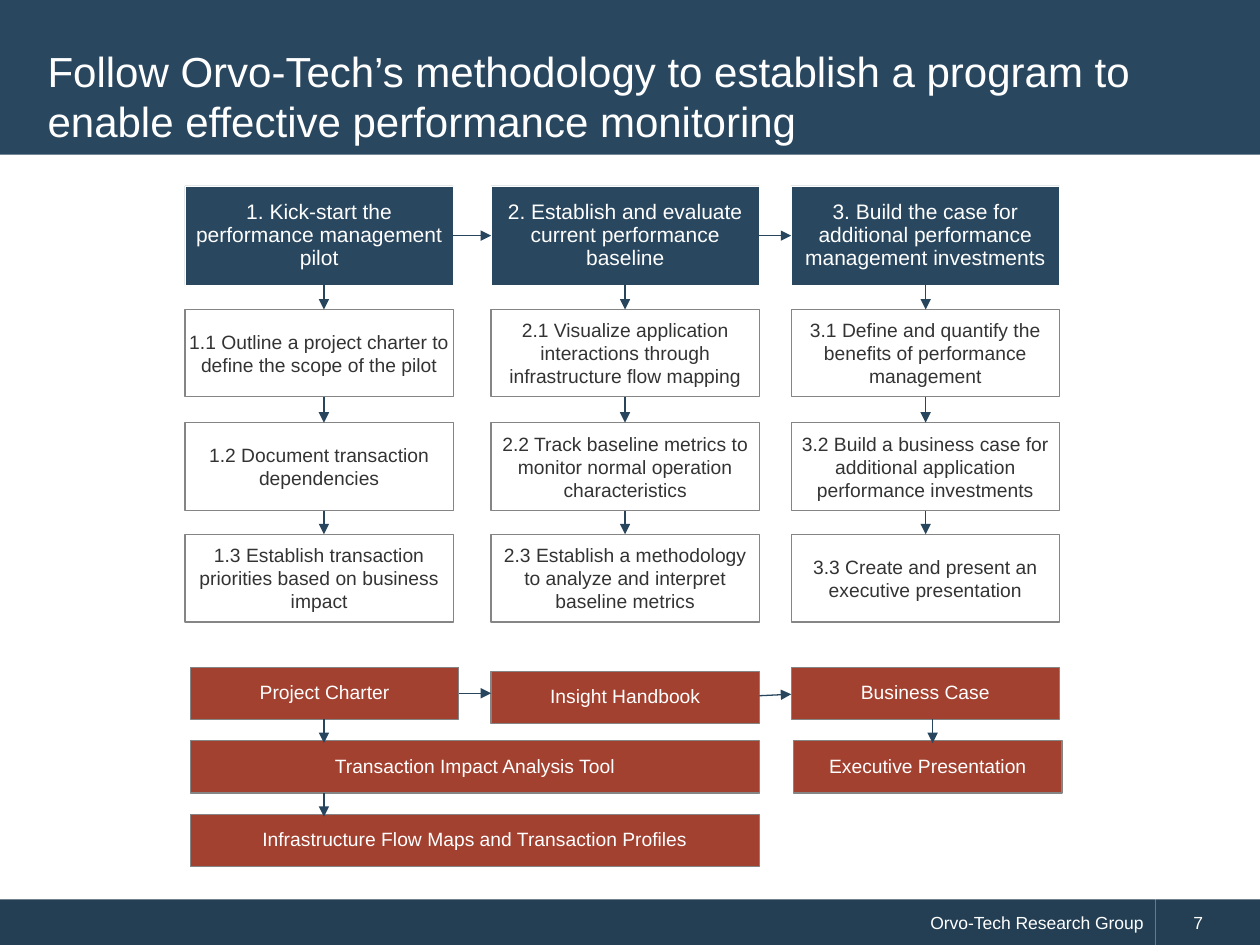
import pptx
import pptx.util
import pptx.dml.color
import pptx.enum.shapes
import pptx.enum.text
import lxml.etree
from dataclasses import dataclass
from pptx.oxml import ns

Cm = pptx.util.Cm
Pt = pptx.util.Pt
ALIGN = pptx.enum.text.PP_ALIGN


@dataclass(frozen=True)
class Theme:
    font: str = "Arial"
    navy: str = "29475F"
    footer: str = "243F54"
    red: str = "A24130"
    white: str = "FFFFFF"
    ink: str = "333333"
    border: str = "858585"
    arrow: str = "27465E"
    title_size: int = 24
    phase_size: int = 12
    step_size: int = 11
    footer_size: int = 10


THEME = Theme()

# Layout in centimetres
COL_X = (3.73, 9.9, 15.95)
ARROW_X = (6.53, 12.6, 18.66)
BOX_W = 5.41
ROWS = ((3.75, 2.0), (6.24, 1.76), (8.52, 1.78), (10.77, 1.77))
OUT_X, OUT_Y, OUT_H, OUT_PITCH = 3.84, 13.45, 1.05, 1.485
WIDE_W = COL_X[1] + BOX_W - OUT_X

PHASES = (
    ("1. Kick-start the performance management pilot",
     "1.1 Outline a project charter to define the scope of the pilot",
     "1.2 Document transaction dependencies",
     "1.3 Establish transaction priorities based on business impact"),
    ("2. Establish and evaluate current performance baseline",
     "2.1 Visualize application interactions through infrastructure flow mapping",
     "2.2 Track baseline metrics to monitor normal operation characteristics",
     "2.3 Establish a methodology to analyze and interpret baseline metrics"),
    ("3. Build the case for additional performance management investments",
     "3.1 Define and quantify the benefits of performance management",
     "3.2 Build a business case for additional application performance investments",
     "3.3 Create and present an executive presentation"),
)

# Text, left, top, width
DELIVERABLES = (
    ("Project Charter", OUT_X, OUT_Y, BOX_W),
    ("Insight Handbook", COL_X[1], OUT_Y + 0.09, BOX_W),
    ("Business Case", COL_X[2], OUT_Y, BOX_W),
    ("Transaction Impact Analysis Tool", OUT_X, OUT_Y + OUT_PITCH, WIDE_W),
    ("Executive Presentation", COL_X[2] + 0.05, OUT_Y + OUT_PITCH, BOX_W),
    ("Infrastructure Flow Maps and Transaction Profiles",
     OUT_X, OUT_Y + 2 * OUT_PITCH, WIDE_W),
)


def rgb(value):
    return pptx.dml.color.RGBColor.from_string(value)


def write(sp, text, size, color, align=ALIGN.CENTER, insets=(0.08, 0.05, 0.08, 0.05),
          spacing=None):
    tf = sp.text_frame
    tf.word_wrap = True
    tf.vertical_anchor = pptx.enum.text.MSO_ANCHOR.MIDDLE
    tf.margin_left, tf.margin_top, tf.margin_right, tf.margin_bottom = map(Cm, insets)
    p = tf.paragraphs[0]
    p.alignment = align
    if spacing:
        p.line_spacing = spacing
    r = p.add_run()
    r.text = text
    r.font.name = THEME.font
    r.font.size = Pt(size)
    r.font.color.rgb = rgb(color)


def add_box(s, x, y, w, h, fill, line=None, line_width=0.75):
    sp = s.shapes.add_shape(pptx.enum.shapes.MSO_SHAPE.RECTANGLE,
                            Cm(x), Cm(y), Cm(w), Cm(h))
    sp.shadow.inherit = False
    sp.fill.solid()
    sp.fill.fore_color.rgb = rgb(fill)
    if line:
        sp.line.color.rgb = rgb(line)
        sp.line.width = Pt(line_width)
    else:
        sp.line.fill.background()
    return sp


def add_arrow(s, x1, y1, x2, y2):
    cx = s.shapes.add_connector(pptx.enum.shapes.MSO_CONNECTOR.STRAIGHT,
                                Cm(x1), Cm(y1), Cm(x2), Cm(y2))
    cx.line.color.rgb = rgb(THEME.arrow)
    cx.line.width = Pt(0.75)
    ln = cx.line._get_or_add_ln()
    lxml.etree.SubElement(ln, ns.qn("a:tailEnd"), type="triangle")
    lxml.etree.SubElement(cx._element.spPr, ns.qn("a:effectLst"))


def add_frame(s):
    # Title band
    add_box(s, 0, 0, 25.4, 3.12, THEME.navy)
    title = s.shapes.add_textbox(Cm(0.71), Cm(0.71), Cm(23.95), Cm(2.44))
    write(title, "Follow Orvo-Tech’s methodology to establish a program to "
          "enable effective performance monitoring", THEME.title_size, THEME.white,
          ALIGN.LEFT, (0.25, 0.13, 0.25, 0.13))
    # Footer
    owner = add_box(s, 0, 18.13, 23.3, 0.93, THEME.footer)
    write(owner, "Orvo-Tech Research Group", THEME.footer_size, THEME.white,
          ALIGN.RIGHT, (0.25, 0.13, 0.25, 0.13))
    number = add_box(s, 23.3, 18.13, 2.1, 0.93, THEME.footer)
    write(number, "7", THEME.footer_size, THEME.white,
          ALIGN.LEFT, (0.76, 0.13, 0.25, 0.13))


def add_phase(s, x, arrow_x, texts):
    for i, (text, (y, h)) in enumerate(zip(texts, ROWS)):
        if i == 0:
            sp = add_box(s, x, y, BOX_W, h, THEME.navy, THEME.white, 0.25)
            write(sp, text, THEME.phase_size, THEME.white,
                  insets=(0.1, 0.05, 0.1, 0.05), spacing=0.9)
        else:
            sp = add_box(s, x, y, BOX_W, h, THEME.white, THEME.border)
            write(sp, text, THEME.step_size, THEME.ink)
    # Arrows down from each box to the next
    for (y, h), (next_y, _) in zip(ROWS, ROWS[1:]):
        add_arrow(s, arrow_x, y + h, arrow_x, next_y)


def add_deliverables(s):
    for text, x, y, w in DELIVERABLES:
        sp = add_box(s, x, y, w, OUT_H, THEME.red, THEME.border)
        write(sp, text, THEME.step_size, THEME.white, spacing=0.9)
    # Arrows across
    mid = OUT_Y + OUT_H / 2
    add_arrow(s, OUT_X + BOX_W, mid, COL_X[1], mid)
    add_arrow(s, COL_X[1] + BOX_W, mid + 0.05, COL_X[2], mid + 0.02)
    # Arrows down
    for x, row in ((ARROW_X[0], 0), (ARROW_X[0], 1), (18.8, 0)):
        top = OUT_Y + OUT_H + row * OUT_PITCH
        add_arrow(s, x, top, x, top + 0.48)


def main():
    prs = pptx.Presentation()
    prs.slide_width, prs.slide_height = Cm(25.4), Cm(19.05)
    s = prs.slides.add_slide(prs.slide_layouts[6])
    add_frame(s)
    # Phases with their steps
    for x, arrow_x, texts in zip(COL_X, ARROW_X, PHASES):
        add_phase(s, x, arrow_x, texts)
    # Arrows between phases
    mid = ROWS[0][0] + ROWS[0][1] / 2
    for x, next_x in zip(COL_X, COL_X[1:]):
        add_arrow(s, x + BOX_W, mid, next_x, mid)
    add_deliverables(s)
    prs.save("out.pptx")


if __name__ == "__main__":
    main()
